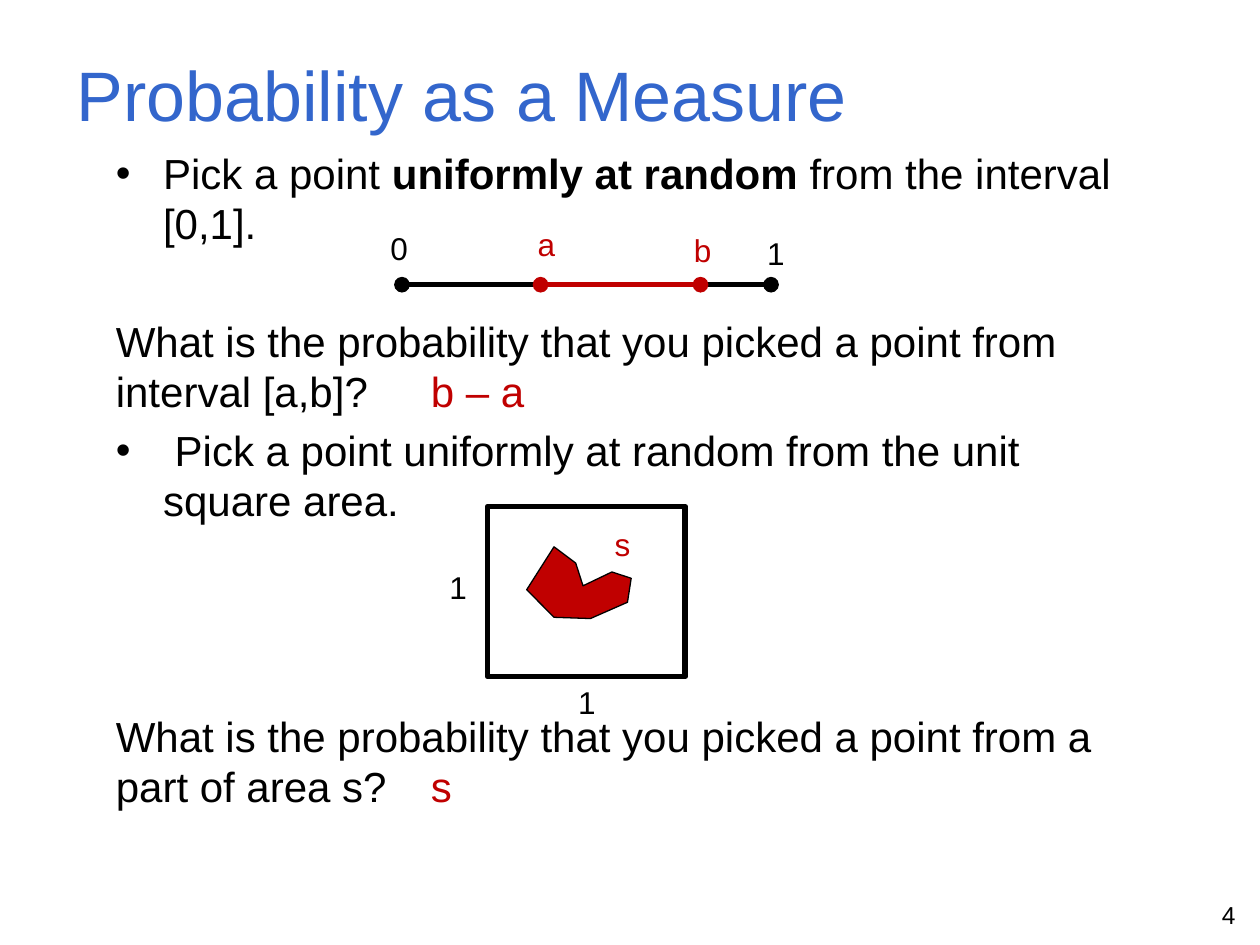
from lxml.etree import SubElement
from pptx import Presentation
from pptx.dml.color import RGBColor
from pptx.enum.shapes import MSO_CONNECTOR, MSO_SHAPE
from pptx.enum.text import MSO_ANCHOR, MSO_AUTO_SIZE, PP_ALIGN
from pptx.oxml.ns import qn
from pptx.util import Pt

COLORS = {"title": "3366CC", "ink": "000000", "accent": "C00000", "paper": "FFFFFF"}
FONT = "Arial"
LINE_PITCH = 28.8
PARA_GAP = 4.8


def rgb(name):
    return RGBColor.from_string(COLORS[name])


def add_run(paragraph, text, size, color="ink", bold=False):
    run = paragraph.add_run()
    run.text = text
    run.font.name = FONT
    run.font.size = Pt(size)
    run.font.bold = bold
    run.font.color.rgb = rgb(color)


def place(shape, left, top, width, height):
    shape.left, shape.top = Pt(left), Pt(top)
    shape.width, shape.height = Pt(width), Pt(height)


def add_label(slide, text, left, top, color="ink", width=19.5, height=29,
              size=18, align=PP_ALIGN.LEFT):
    label = slide.shapes.add_textbox(Pt(left), Pt(top), Pt(width), Pt(height))
    label.text_frame.word_wrap = True
    paragraph = label.text_frame.paragraphs[0]
    paragraph.alignment = align
    add_run(paragraph, text, size, color)


def add_interval(slide, start, end, y, color):
    """Segment with a dot at both ends."""
    segment = slide.shapes.add_connector(
        MSO_CONNECTOR.STRAIGHT, Pt(start), Pt(y), Pt(end), Pt(y))
    segment.line.color.rgb = rgb(color)
    segment.line.width = Pt(3)
    outline = segment.line._get_or_add_ln()
    for end_tag in ("a:headEnd", "a:tailEnd"):
        SubElement(outline, qn(end_tag), type="oval")
    SubElement(segment._element.spPr, qn("a:effectLst"))


def style_area(shape, fill, line_width):
    shape.shadow.inherit = False
    shape.fill.solid()
    shape.fill.fore_color.rgb = rgb(fill)
    shape.line.color.rgb = rgb("ink")
    shape.line.width = Pt(line_width)


def format_paragraph(paragraph, skipped_lines, bullet, tab=None):
    """Set indent, bullet and spacing; skipped_lines leaves room for a figure."""
    paragraph.line_spacing = Pt(LINE_PITCH)
    paragraph.space_before = Pt(PARA_GAP + skipped_lines * (LINE_PITCH + PARA_GAP))
    properties = paragraph._p.get_or_add_pPr()
    properties.set("marL", str(Pt(27 if bullet else 0)))
    properties.set("indent", str(Pt(-27 if bullet else 0)))
    if bullet:
        SubElement(properties, qn("a:buFont"), typeface=FONT)
        SubElement(properties, qn("a:buChar"), char="•")
    else:
        SubElement(properties, qn("a:buNone"))
    if tab:
        stops = SubElement(properties, qn("a:tabLst"))
        SubElement(stops, qn("a:tab"), pos=str(Pt(tab)), algn="l")


def add_title(slide):
    title = slide.shapes.title
    place(title, 36.7, 8.6, 648, 90)
    title.text_frame.vertical_anchor = MSO_ANCHOR.MIDDLE
    paragraph = title.text_frame.paragraphs[0]
    paragraph.alignment = PP_ALIGN.LEFT
    add_run(paragraph, "Probability as a Measure", 40, "title")


def add_body(slide):
    body = slide.placeholders[1]
    place(body, 59, 80.6, 599, 416)
    frame = body.text_frame
    frame.auto_size = MSO_AUTO_SIZE.NONE
    frame.vertical_anchor = MSO_ANCHOR.TOP

    pick_interval = frame.paragraphs[0]
    format_paragraph(pick_interval, 0, True)
    add_run(pick_interval, "Pick a point ", 24)
    add_run(pick_interval, "uniformly at random", 24, bold=True)
    add_run(pick_interval, " from the interval [0,1].", 24)

    def add_question(question, answer, skipped_lines, answer_at):
        paragraph = frame.add_paragraph()
        format_paragraph(paragraph, skipped_lines, False, answer_at)
        add_run(paragraph, question + "\t", 24)
        add_run(paragraph, answer, 24, "accent")

    add_question("What is the probability that you picked a point from "
                 "interval [a,b]?", "b – a", 1, 171)
    pick_square = frame.add_paragraph()
    format_paragraph(pick_square, 0, True)
    add_run(pick_square, " Pick a point uniformly at random from the unit square area.", 24)
    add_question("What is the probability that you picked a point from "
                 "a part of area s?", "s", 3, 181.5)


def add_number_line(slide):
    add_interval(slide, 229.7, 440.6, 162.7, "ink")
    add_label(slide, "0", 216, 127.4)
    add_label(slide, "1", 431.3, 130.3)
    add_interval(slide, 308.9, 400.3, 162.7, "accent")
    add_label(slide, "a", 300.2, 125.3, "accent")
    add_label(slide, "b", 389.5, 128.2, "accent")


def add_unit_square(slide):
    square = slide.shapes.add_shape(
        MSO_SHAPE.RECTANGLE, Pt(278.6), Pt(289.4), Pt(113), Pt(97.2))
    style_area(square, "paper", 3.25)
    add_label(slide, "1", 249.8, 321.1)
    add_label(slide, "1", 323.3, 386.6)

    # Region s inside the square
    corners = [(316.6, 312.5), (301, 337), (316.6, 352.8), (337.4, 353.5),
               (358.6, 344.2), (360.7, 330.5), (349.7, 326.9), (333.2, 334.8),
               (329, 321.8)]
    points = [(Pt(x), Pt(y)) for x, y in corners]
    builder = slide.shapes.build_freeform(*points[0])
    builder.add_line_segments(points[1:], close=True)
    style_area(builder.convert_to_shape(), "accent", 0.75)
    add_label(slide, "s", 344.2, 296.6, "accent")


def main():
    deck = Presentation()
    deck.slide_width, deck.slide_height = Pt(720), Pt(540)
    slide = deck.slides.add_slide(deck.slide_layouts[1])
    add_title(slide)
    add_body(slide)
    add_number_line(slide)
    add_unit_square(slide)
    # Page number
    add_label(slide, "4", 545, 510.5, width=168, height=22.3, size=14,
              align=PP_ALIGN.RIGHT)
    deck.save("out.pptx")


if __name__ == "__main__":
    main()
